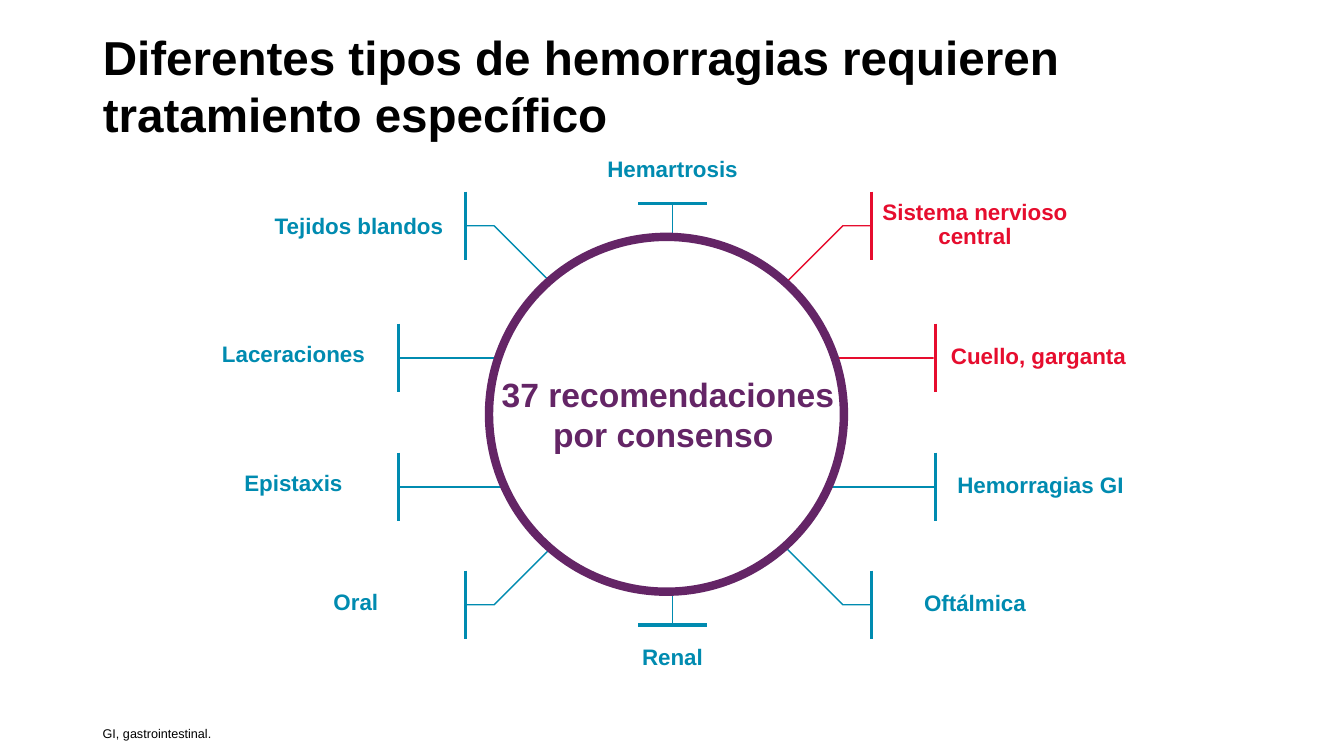
import pptx
import pptx.util
import pptx.dml.color
import pptx.enum.shapes
import pptx.enum.text
import lxml.etree
from dataclasses import dataclass
from pptx.util import Inches


@dataclass
class Theme:
    font: str = "Arial"
    black: str = "000000"
    white: str = "FFFFFF"
    teal: str = "008BB0"
    red: str = "E60D2E"
    purple: str = "642566"
    title: int = 34
    centre: int = 24
    label: int = 16
    note: int = 9


theme = Theme()
rgb = pptx.dml.color.RGBColor.from_string
shapes_enum = pptx.enum.shapes
anchors = pptx.enum.text.MSO_ANCHOR
aligns = pptx.enum.text.PP_ALIGN


def write(shape, text, size, color, bold, align, anchor, insets):
    frame = shape.text_frame
    frame.word_wrap = True
    frame.vertical_anchor = anchor
    frame.margin_left, frame.margin_top, frame.margin_right, frame.margin_bottom = map(Inches, insets)
    frame.text = text
    para = frame.paragraphs[0]
    para.alignment = align
    font = para.runs[0].font
    font.name, font.size, font.bold = theme.font, pptx.util.Pt(size), bold
    font.color.rgb = rgb(color)
    return para


def draw_line(x1, y1, x2, y2, color, width):
    line = page.shapes.add_connector(
        shapes_enum.MSO_CONNECTOR.STRAIGHT, Inches(x1), Inches(y1), Inches(x2), Inches(y2))
    line.line.color.rgb = rgb(color)
    line.line.width = pptx.util.Pt(width)
    lxml.etree.SubElement(line._element.spPr, pptx.oxml.ns.qn("a:effectLst"))


deck = pptx.Presentation()
deck.slide_width, deck.slide_height = Inches(13.33), Inches(7.5)
page = deck.slides.add_slide(deck.slide_layouts[5])

# Title and footnote
title = page.shapes.title
title.left, title.top, title.width, title.height = map(Inches, (0.92, 0.25, 11.5, 1.19))
write(title, "Diferentes tipos de hemorragias requieren tratamiento específico", theme.title,
      theme.black, True, aligns.LEFT, anchors.MIDDLE, (0.1, 0.05, 0.1, 0.05))
note = page.shapes.add_textbox(*map(Inches, (0.92, 6.95, 10.85, 0.4)))
write(note, "GI, gastrointestinal.", theme.note, theme.black, False,
      aligns.LEFT, anchors.BOTTOM, (0.1, 0.05, 0.1, 0))

# Bleeding types: text, label left and top, bar centre x and y, colour
side_types = [
    ("Tejidos blandos", 2.52, 1.92, 4.62, 2.24, theme.teal),
    ("Laceraciones", 1.87, 3.19, 3.95, 3.55, theme.teal),
    ("Epistaxis", 1.87, 4.47, 3.95, 4.83, theme.teal),
    ("Oral ", 2.52, 5.65, 4.62, 6, theme.teal),
    ("Sistema nervioso central", 8.63, 1.9, 8.64, 2.24, theme.red),
    ("Cuello, garganta", 9.26, 3.21, 9.28, 3.55, theme.red),
    ("Hemorragias GI", 9.28, 4.49, 9.28, 4.83, theme.teal),
    ("Oftálmica", 8.63, 5.66, 8.64, 6, theme.teal),
]
pole_types = [
    ("Hemartrosis", 5.63, 1.35, 6.67, 2.02, theme.teal),
    ("Renal", 5.63, 6.2, 6.67, 6.2, theme.teal),
]
ring_x, ring_y, ring_size = 6.61, 4.11, 3.52
bar_half, label_width, label_height = 0.34, 2.08, 0.67

# Spokes from the bars to the ring
for text, left, top, x, y, color in side_types:
    inward = 1 if x < ring_x else -1
    if abs(y - ring_y) < 1:
        draw_line(x, y, x + inward * 1.03, y, color, 1)
        continue
    down = 1 if y < ring_y else -1
    elbow = page.shapes.build_freeform(Inches(x), Inches(y))
    elbow.add_line_segments([
        (Inches(x + inward * 0.28), Inches(y)),
        (Inches(x + inward * 0.85), Inches(y + down * 0.57))], close=False)
    spoke = elbow.convert_to_shape()
    spoke.shadow.inherit = False
    spoke.fill.background()
    spoke.line.color.rgb = rgb(color)
    spoke.line.width = pptx.util.Pt(1)
for text, left, top, x, y, color in pole_types:
    draw_line(x, y, x, y + (0.79 if y < ring_y else -0.79), color, 1)

# Central ring
ring = page.shapes.add_shape(
    shapes_enum.MSO_SHAPE.OVAL, Inches(ring_x - ring_size / 2), Inches(ring_y - ring_size / 2),
    Inches(ring_size), Inches(ring_size))
ring.shadow.inherit = False
ring.fill.solid()
ring.fill.fore_color.rgb = rgb(theme.white)
ring.line.color.rgb = rgb(theme.purple)
ring.line.width = pptx.util.Pt(6)
centre = page.shapes.add_textbox(*map(Inches, (4.71, 3.66, 3.83, 0.91)))
write(centre, "37 recomendaciones por consenso ", theme.centre, theme.purple, True,
      aligns.CENTER, anchors.TOP, (0.1, 0.05, 0.1, 0.05))

# Labels
for text, left, top, x, y, color in side_types + pole_types:
    label = page.shapes.add_shape(
        shapes_enum.MSO_SHAPE.RECTANGLE, Inches(left), Inches(top),
        Inches(label_width), Inches(label_height))
    label.shadow.inherit = False
    label.fill.solid()
    label.fill.fore_color.rgb = rgb(theme.white)
    label.line.fill.background()
    side_inset = 0 if text.startswith("Sistema") else 0.1
    para = write(label, text, theme.label, color, True, aligns.CENTER, anchors.MIDDLE,
                 (side_inset, 0.1, side_inset, 0.1))
    para.line_spacing = 0.9

# Bars beside the labels
for text, left, top, x, y, color in side_types:
    draw_line(x, y - bar_half, x, y + bar_half, color, 2.25)
for text, left, top, x, y, color in pole_types:
    draw_line(x - bar_half, y, x + bar_half, y, color, 2.25)

deck.save("out.pptx")
